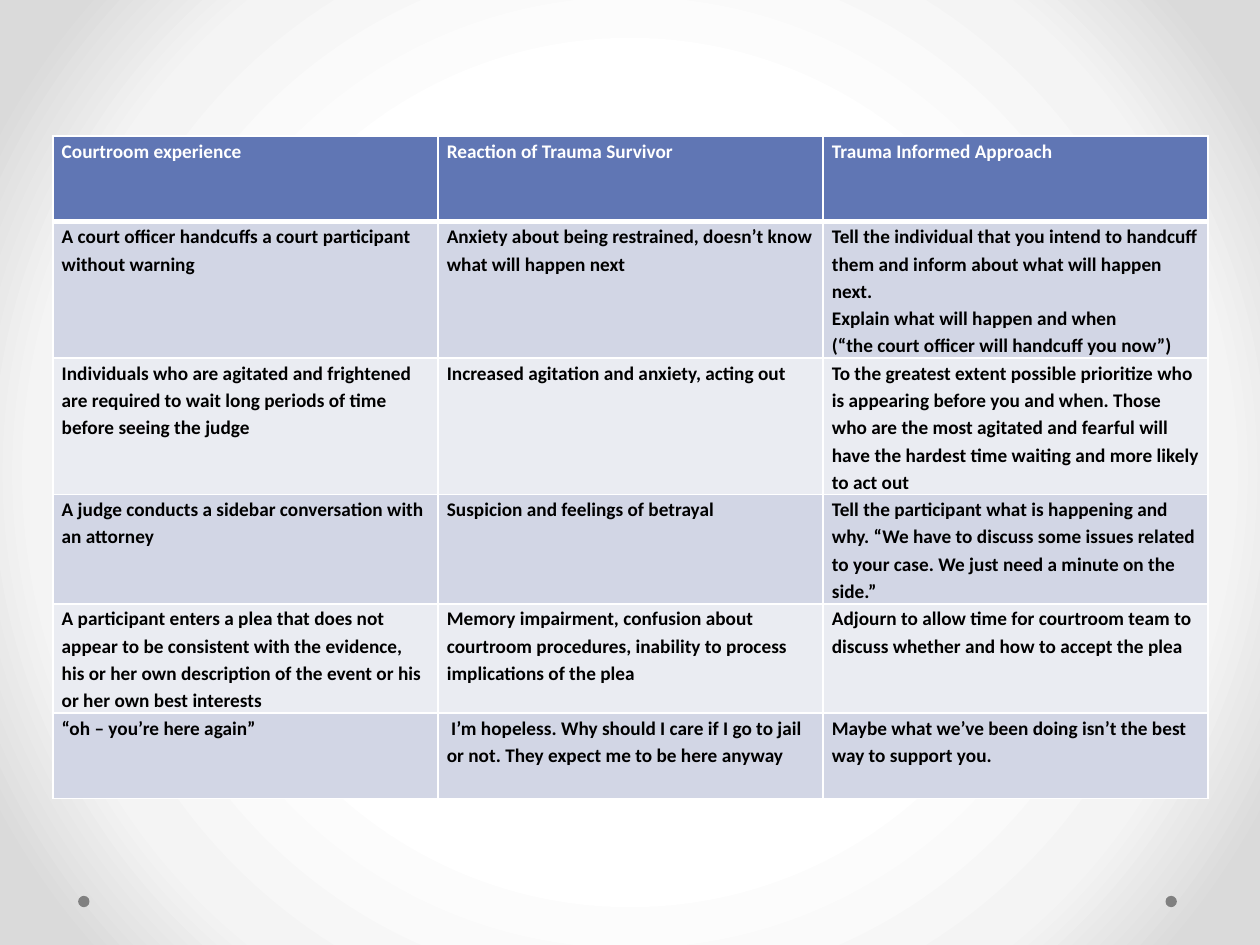
from pptx import Presentation
from pptx.dml.color import RGBColor
from pptx.enum import shapes
from pptx.oxml import parse_xml
from pptx.oxml.ns import nsdecls
from pptx.util import Inches, Pt

WHITE = RGBColor(0xFF, 0xFF, 0xFF)
BLACK = RGBColor(0x00, 0x00, 0x00)
GREY = RGBColor(0x80, 0x80, 0x80)
HEADER_BLUE = RGBColor(0x60, 0x76, 0xB4)
BAND_DARK = RGBColor(0xD2, 0xD6, 0xE5)
BAND_LIGHT = RGBColor(0xEA, 0xEC, 0xF2)
BACKGROUND_STOPS = [(50, "FFFFFF"), (76, "F4F4F4"), (92, "DADADA")]

ROWS = [
    ("Courtroom experience", "Reaction of Trauma Survivor", "Trauma Informed Approach"),
    ("A court officer handcuffs a court participant without warning",
     "Anxiety about being restrained, doesn’t know what will happen next",
     "Tell the individual that you intend to handcuff them and inform about "
     "what will happen next.\n"
     "Explain what will happen and when\n"
     "(“the court officer will handcuff you now”)"),
    ("Individuals who are agitated and frightened are required to wait long "
     "periods of time before seeing the judge",
     "Increased agitation and anxiety, acting out",
     "To the greatest extent possible prioritize who is appearing before you "
     "and when. Those who are the most agitated and fearful will have the "
     "hardest time waiting and more likely to act out"),
    ("A judge conducts a sidebar conversation with an attorney",
     "Suspicion and feelings of betrayal",
     "Tell the participant what is happening and why. “We have to discuss some "
     "issues related to your case. We just need a minute on the side.”"),
    ("A participant enters a plea that does not appear to be consistent with "
     "the evidence, his or her own description of the event or his or her own "
     "best interests",
     "Memory impairment, confusion about courtroom procedures, inability to "
     "process implications of the plea",
     "Adjourn to allow time for courtroom team to discuss whether and how to "
     "accept the plea"),
    ("“oh – you’re here again”",
     " I’m hopeless. Why should I care if I go to jail or not. They expect me "
     "to be here anyway",
     "Maybe what we’ve been doing isn’t the best way to support you."),
]


def set_borders(cell, widths):
    """Draw white borders; widths maps L, R, T and B, in that order, to points."""
    properties = cell._tc.get_or_add_tcPr()
    for position, (side, width) in enumerate(widths.items()):
        properties.insert(position, parse_xml(
            f'<a:ln{side} {nsdecls("a")} w="{Pt(width)}"><a:solidFill>'
            f'<a:srgbClr val="{WHITE}"/></a:solidFill></a:ln{side}>'))


deck = Presentation()
deck.slide_width = Inches(10)
deck.slide_height = Inches(7.5)
page = deck.slides.add_slide(deck.slide_layouts[6])

# Radial background
stops = "".join(f'<a:gs pos="{percent * 1000}"><a:srgbClr val="{colour}"/></a:gs>'
                for percent, colour in BACKGROUND_STOPS)
page._element.cSld.insert(0, parse_xml(
    f'<p:bg {nsdecls("p", "a")}><p:bgPr><a:gradFill rotWithShape="1">'
    f'<a:gsLst>{stops}</a:gsLst><a:path path="circle">'
    '<a:fillToRect l="50000" t="50000" r="50000" b="50000"/></a:path>'
    '</a:gradFill><a:effectLst/></p:bgPr></p:bg>'))

# Footer dots
for left in (9.25, 0.62):
    dot = page.shapes.add_shape(shapes.MSO_SHAPE.OVAL, Inches(left), Inches(7.11),
                                Inches(0.09), Inches(0.09))
    dot.shadow.inherit = False
    dot.fill.solid()
    dot.fill.fore_color.rgb = GREY
    dot.line.fill.background()

# Table of experiences, reactions and approaches
table = page.shapes.add_table(len(ROWS), 3, Inches(0.42), Inches(1.08),
                              Inches(9.17), Inches(0.68 * len(ROWS))).table
for row_index, row in enumerate(ROWS):
    is_header = row_index == 0
    if is_header:
        fill_colour = HEADER_BLUE
    else:
        fill_colour = BAND_DARK if row_index % 2 else BAND_LIGHT
    borders = {"L": 1, "R": 1, "T": 3 if row_index == 1 else 1, "B": 3 if is_header else 1}
    for column_index, wording in enumerate(row):
        cell = table.cell(row_index, column_index)
        cell.margin_left = cell.margin_right = Inches(0.07)
        cell.margin_top = cell.margin_bottom = 0
        cell.fill.solid()
        cell.fill.fore_color.rgb = fill_colour
        set_borders(cell, borders)
        cell.text_frame.text = wording
        for para in cell.text_frame.paragraphs:
            para.line_spacing = 1.15
            for span in para.runs:
                span.font.name = "Calibri"
                span.font.size = Pt(11)
                span.font.bold = True
                span.font.color.rgb = WHITE if is_header else BLACK

deck.save("out.pptx")
